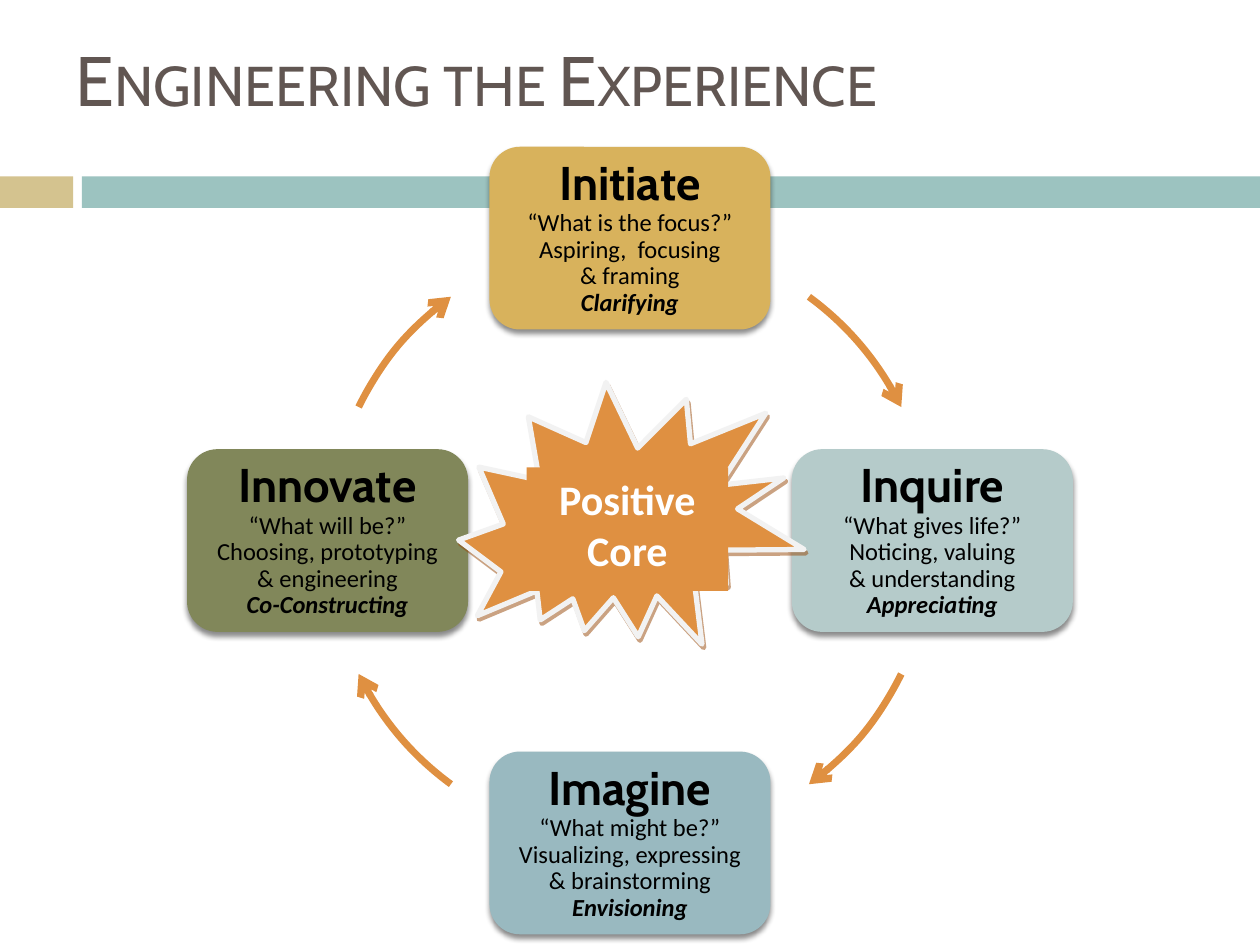
from copy import deepcopy
from dataclasses import dataclass
from math import cos, radians, sin

from lxml.etree import SubElement as Sub
from pptx import Presentation
from pptx.dml.color import RGBColor as Rgb
from pptx.enum.shapes import MSO_SHAPE as Kind
from pptx.enum.text import MSO_ANCHOR as Anchor, PP_ALIGN as Align
from pptx.oxml.ns import qn
from pptx.util import Emu, Inches, Pt


@dataclass(frozen=True)
class Theme:
    sand: str = "D4C38F"
    teal: str = "9CC3C0"
    orange: str = "DF9041"
    rim: str = "F2F2F2"
    brown: str = "615652"
    black: str = "000000"
    white: str = "FFFFFF"
    rust: str = "974706"
    head: str = "Cabin"
    body: str = "Calibri"
    title: int = 40
    name: int = 27
    core: int = 24
    note: int = 14


T = Theme()

# Grid: 100 columns by 75 rows; the cycle is a circle on it
COLS, ROWS = 100, 75
WIDE, HIGH = Inches(10), Inches(7.5)
MID_X, MID_Y, RADIUS = 50, 42.9, 24
CARD_W, CARD_H = 22.3, 14.5
# Arc angles in degrees, clockwise from the right
ARCS = [(306.3, 333.8), (26.2, 53.7), (126.3, 153.8), (206.2, 233.7)]

# Clockwise from the top: fill, name, question, action, result
STAGES = [
    ("D8B25C", "Initiate", "“What is the focus?”",
     "Aspiring,  focusing\n& framing", "Clarifying"),
    ("B5CBCA", "Inquire", "“What gives life?”",
     "Noticing, valuing\n& understanding", "Appreciating"),
    ("99B9C0", "Imagine", "“What might be?”",
     "Visualizing, expressing & brainstorming", "Envisioning"),
    ("81875A", "Innovate", "“What will be?”",
     "Choosing, prototyping & engineering", "Co-Constructing"),
]


def grid(x, y, w, h):
    """Turn columns and rows into slide lengths."""
    col, row = WIDE / COLS, HIGH / ROWS
    return [Emu(round(n)) for n in (x * col, y * row, w * col, h * row)]


def shape(slide, kind, area, fill=None, line=None, width=0):
    item = slide.shapes.add_shape(kind, *grid(*area))
    item.shadow.inherit = False
    if fill:
        item.fill.solid()
        item.fill.fore_color.rgb = Rgb.from_string(fill)
    else:
        item.fill.background()
    if line:
        item.line.color.rgb = Rgb.from_string(line)
        item.line.width = Pt(width)
    else:
        item.line.fill.background()
    return item


def shade(item, color, alpha, blur, dist, angle):
    """Add an outer shadow; lengths in points, alpha in percent."""
    effects = item._element.spPr.find(qn("a:effectLst"))
    outer = Sub(effects, qn("a:outerShdw"), blurRad=str(Pt(blur)),
                dist=str(Pt(dist)), dir=str(angle * 60000), rotWithShape="0")
    tint = Sub(outer, qn("a:srgbClr"), val=color)
    Sub(tint, qn("a:alpha"), val=str(alpha * 1000))


def style(run, size, face, color, bold=False, slant=False, small=False):
    font = run.font
    font.size, font.name = Pt(size), face
    font.bold, font.italic = bold, slant
    font.color.rgb = Rgb.from_string(color)
    if small:
        run._r.get_or_add_rPr().set("cap", "small")


def write(item, lines, align=Align.CENTER, anchor=Anchor.MIDDLE,
          pad=None, space=None, **form):
    """Fill a shape; each line is a list of (text, format changes)."""
    frame = item.text_frame
    frame.word_wrap = True
    frame.vertical_anchor = anchor
    if pad is not None:
        frame.margin_left = frame.margin_right = Inches(pad)
        frame.margin_top = frame.margin_bottom = Inches(pad)
    for i, line in enumerate(lines):
        para = frame.add_paragraph() if i else frame.paragraphs[0]
        para.alignment = align
        if space:
            para.line_spacing = space
        for text, change in line:
            for j, part in enumerate(text.split("\n")):
                if j:
                    # A break takes the format of the run before it
                    para.add_line_break()
                    para._p[-1].append(deepcopy(run._r.rPr))
                if part:
                    run = para.add_run()
                    run.text = part
                    style(run, **{**form, **change})


def card(slide, turn, fill, name, query, act, result):
    x = MID_X + RADIUS * sin(radians(turn)) - CARD_W / 2
    y = MID_Y - RADIUS * cos(radians(turn)) - CARD_H / 2
    item = shape(slide, Kind.ROUNDED_RECTANGLE, (x, y, CARD_W, CARD_H), fill)
    shade(item, T.black, 45, 3, 2.4, 90)
    top = {"size": T.name, "face": T.head, "bold": True}
    write(item, [[(name + "\n", top), (query, {})], [(act, {})],
                 [(result, {"bold": True, "slant": True})]],
          pad=0.11, space=0.9, size=T.note, face=T.body, color=T.black)


def arc(slide, start, end):
    area = (MID_X - RADIUS, MID_Y - RADIUS, 2 * RADIUS, 2 * RADIUS)
    item = shape(slide, Kind.ARC, area, line=T.orange, width=4)
    # Angles are stored in 60000ths, adjustments in 100000ths
    item.adjustments[0] = start * 0.6
    item.adjustments[1] = end * 0.6
    Sub(item.line._get_or_add_ln(), qn("a:tailEnd"), type="arrow")


def title(slide, text):
    item = slide.shapes.add_textbox(*grid(5, 0, 90, 12.5))
    write(item, [[(text, {})]], align=Align.LEFT, size=T.title,
          face=T.head, color=T.brown, small=True)


def core(slide, words):
    burst = shape(slide, Kind.EXPLOSION2, (37.5, 28.7, 25.6, 25.4),
                  T.orange, T.rim, 3)
    burst.rotation = 30.2
    shade(burst, T.rust, 50, 0, 2.2, 63)
    label = shape(slide, Kind.RECTANGLE, (41.8, 37.1, 16, 9.8), T.orange)
    write(label, [[(word, {})] for word in words], anchor=Anchor.TOP,
          size=T.core, face=T.body, color=T.white, bold=True)


def main():
    deck = Presentation()
    deck.slide_width, deck.slide_height = WIDE, HIGH
    slide = deck.slides.add_slide(deck.slide_layouts[6])

    # Band across the page
    shape(slide, Kind.RECTANGLE, (0, 14, 5.8, 2.5), T.sand)
    shape(slide, Kind.RECTANGLE, (6.5, 14, 93.5, 2.5), T.teal)

    # Cycle of stages
    for i, (stage, span) in enumerate(zip(STAGES, ARCS)):
        card(slide, i * 90, *stage)
        arc(slide, *span)

    # Heading and centre
    title(slide, "Engineering the Experience")
    core(slide, ["Positive", "Core"])
    deck.save("out.pptx")


if __name__ == "__main__":
    main()
